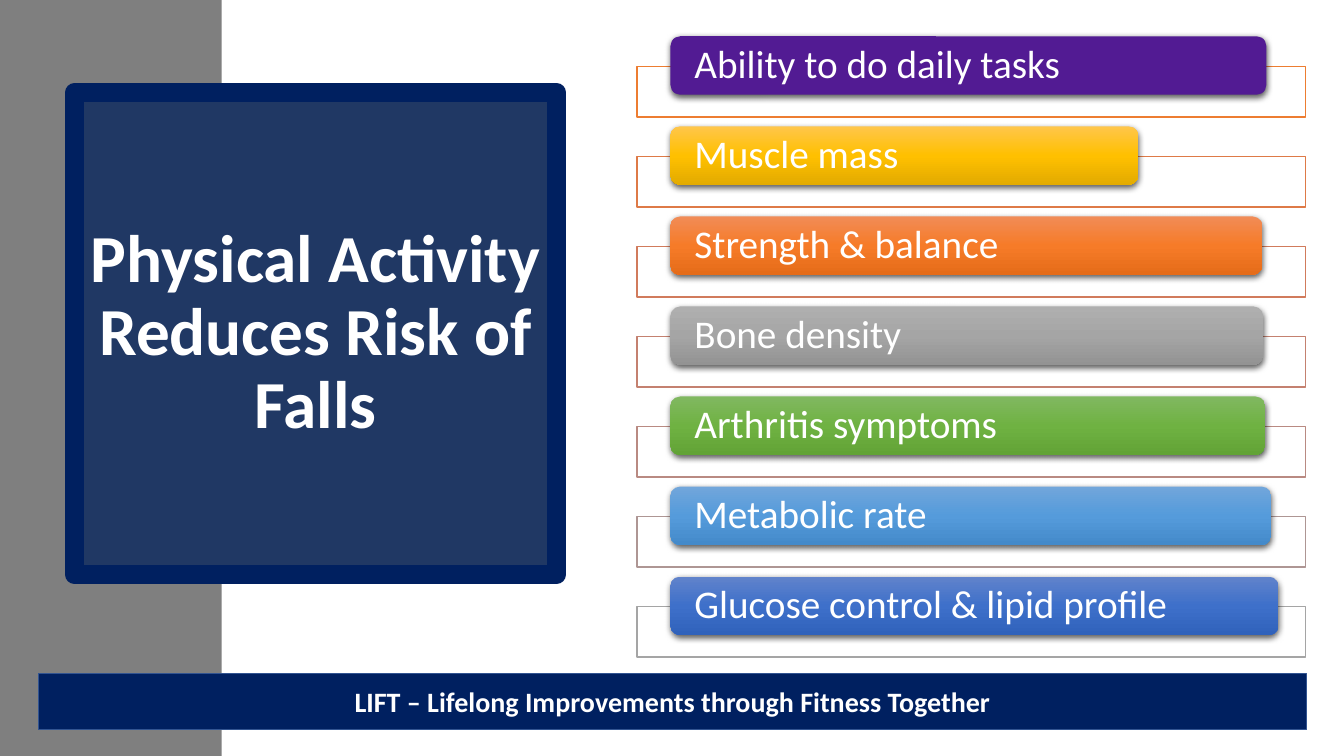
from dataclasses import dataclass

from lxml import etree
from pptx import Presentation
from pptx import util as u
from pptx.dml.color import RGBColor
from pptx.enum import shapes, text
from pptx.oxml.ns import qn


@dataclass(frozen=True)
class Theme:
    font: str = "Calibri"
    white: str = "FFFFFF"
    side_band: str = "7F7F7F"
    title_fill: str = "203864"
    navy: str = "002060"
    footer_line: str = "325491"
    shadow: str = "000000"
    title_size: int = 48
    benefit_size: int = 28
    footer_size: int = 20


THEME = Theme()
SLIDE_W, SLIDE_H = 13.33, 7.5

# Benefit, bar width, bar colours from top to bottom, frame colour
BENEFITS = [
    ("Ability to do daily tasks", 5.91, ["521B93"], "ED7D31"),
    ("Muscle mass", 4.64, ["FFC64B", "FFC000", "E3AB00"], "DE7A47"),
    ("Strength & balance", 5.87, ["F18C57", "F67B28", "E56C19"], "D17B5C"),
    ("Bone density", 5.88, ["AFAFAF", "A5A5A5", "939393"], "C48170"),
    ("Arthritis symptoms", 5.9, ["81B861", "6FB242", "62A336"], "B98A82"),
    ("Metabolic rate", 5.96, ["71A6DB", "559BDB", "448ACA"], "AE9694"),
    ("Glucose control & lipid profile", 6.03, ["6183CB", "3E70CA", "3062BB"], "A5A5A5"),
]
LIST_TOP = 0.36
ROW_PITCH = 5.36 / (len(BENEFITS) - 1)
FRAME_LEFT, FRAME_DROP, FRAME_W, FRAME_H = 6.32, 0.3, 6.63, 0.5
BAR_LEFT, BAR_H = 6.65, 0.58


def add_color(parent, color, alpha=None):
    node = etree.SubElement(parent, qn("a:srgbClr"), val=color)
    if alpha is not None:
        etree.SubElement(node, qn("a:alpha"), val=str(alpha * 1000))


def paint(shape, colors):
    """Fill with one solid colour, or with an even top-to-bottom gradient."""
    if len(colors) == 1:
        shape.fill.solid()
        shape.fill.fore_color.rgb = RGBColor.from_string(colors[0])
        return
    shape.fill.gradient()
    shape.fill.gradient_angle = 270
    stops = shape._element.spPr.find(qn("a:gradFill")).find(qn("a:gsLst"))
    for stop in list(stops):
        stops.remove(stop)
    for i, color in enumerate(colors):
        position = 100000 * i // (len(colors) - 1)
        add_color(etree.SubElement(stops, qn("a:gs"), pos=str(position)), color)


def add_panel(slide, box, colors, line=None, line_width=1,
              kind=shapes.MSO_SHAPE.RECTANGLE):
    panel = slide.shapes.add_shape(kind, *(u.Inches(side) for side in box))
    panel.shadow.inherit = False
    paint(panel, colors)
    if line:
        panel.line.color.rgb = RGBColor.from_string(line)
        panel.line.width = u.Pt(line_width)
    else:
        panel.line.fill.background()
    return panel


def write(panel, words, size, bold=False, align=text.PP_ALIGN.CENTER, spacing=1.0):
    frame = panel.text_frame
    frame.word_wrap = True
    frame.vertical_anchor = text.MSO_ANCHOR.MIDDLE
    paragraph = frame.paragraphs[0]
    paragraph.alignment = align
    paragraph.line_spacing = spacing
    run = paragraph.add_run()
    run.text = words
    run.font.name = THEME.font
    run.font.size = u.Pt(size)
    run.font.bold = bold
    run.font.color.rgb = RGBColor.from_string(THEME.white)


def round_corners(panel):
    """Join the outline's sides with round corners."""
    etree.SubElement(panel.line._get_or_add_ln(), qn("a:round"))


def drop_shadow(panel):
    effects = panel._element.spPr.find(qn("a:effectLst"))
    shadow = etree.SubElement(
        effects, qn("a:outerShdw"), blurRad=str(u.Pt(4.5)), dist=str(u.Pt(1.5)),
        dir="5400000", algn="ctr", rotWithShape="0")
    add_color(shadow, THEME.shadow, 63)


def add_benefit(slide, row, words, width, colors, frame_color):
    top = LIST_TOP + row * ROW_PITCH
    add_panel(slide, (FRAME_LEFT, top + FRAME_DROP, FRAME_W, FRAME_H),
              [THEME.white], frame_color)
    bar = add_panel(slide, (BAR_LEFT, top, width, BAR_H), colors,
                    kind=shapes.MSO_SHAPE.ROUNDED_RECTANGLE)
    drop_shadow(bar)
    inner = bar.text_frame
    inner.margin_left = inner.margin_right = u.Inches(0.21)
    inner.margin_top = inner.margin_bottom = 0
    write(bar, words, THEME.benefit_size, align=text.PP_ALIGN.LEFT, spacing=0.9)


def add_title(slide):
    title = add_panel(slide, (0.74, 0.92, 4.78, 4.78), [THEME.title_fill],
                      THEME.navy, 13.75)
    round_corners(title)
    write(title, "Physical Activity Reduces Risk of Falls", THEME.title_size,
          bold=True, spacing=0.9)


def add_footer(slide):
    footer = add_panel(slide, (0.38, 6.68, 12.58, 0.56), [THEME.navy], THEME.footer_line)
    write(footer, "LIFT – Lifelong Improvements through Fitness Together",
          THEME.footer_size, bold=True)


def main():
    deck = Presentation()
    deck.slide_width, deck.slide_height = u.Inches(SLIDE_W), u.Inches(SLIDE_H)
    slide = deck.slides.add_slide(deck.slide_layouts[6])
    add_panel(slide, (0, 0, 2.2, SLIDE_H), [THEME.side_band])
    add_title(slide)
    for row, benefit in enumerate(BENEFITS):
        add_benefit(slide, row, *benefit)
    add_footer(slide)
    deck.save("out.pptx")


if __name__ == "__main__":
    main()
